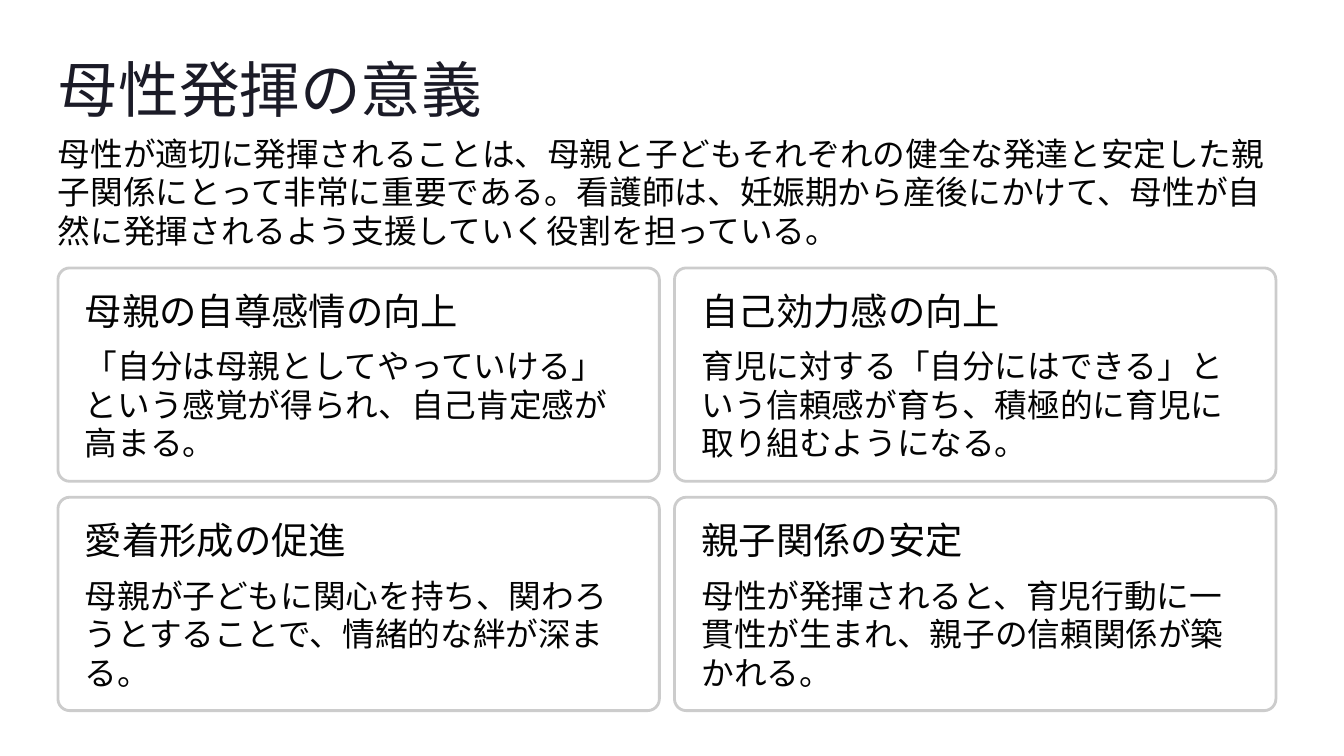
from lxml.etree import SubElement
from pptx import Presentation
from pptx.dml.color import RGBColor
from pptx.enum.shapes import MSO_SHAPE
from pptx.enum.text import MSO_ANCHOR, MSO_AUTO_SIZE, PP_ALIGN
from pptx.oxml.ns import qn
from pptx.util import Inches, Pt

COLORS = {"title": "1B1B27", "text": "030303", "card": "FFFFFF", "border": "CCCCCC"}
HEADING_FONT = "Inter"
BODY_FONT = "Karla"

TITLE = "母性発揮の意義"
INTRODUCTION = (
    "母性が適切に発揮されることは、母親と子どもそれぞれの健全な発達と安定した親子関係にとって"
    "非常に重要である。看護師は、妊娠期から産後にかけて、母性が自然に発揮されるよう支援して"
    "いく役割を担っている。"
)
CARDS = [
    ("母親の自尊感情の向上",
     "「自分は母親としてやっていける」という感覚が得られ、自己肯定感が高まる。"),
    ("自己効力感の向上",
     "育児に対する「自分にはできる」という信頼感が育ち、積極的に育児に取り組むようになる。"),
    ("愛着形成の促進",
     "母親が子どもに関心を持ち、関わろうとすることで、情緒的な絆が深まる。"),
    ("親子関係の安定",
     "母性が発揮されると、育児行動に一貫性が生まれ、親子の信頼関係が築かれる。"),
]

# Card grid, in inches
COLUMNS = 2
LEFT, TOP = 0.69, 3.19
CARD_WIDTH, CARD_HEIGHT = 7.16, 2.54
COLUMN_STEP, ROW_STEP = 7.34, 2.73
PADDING = 0.32


def color(name):
    return RGBColor.from_string(COLORS[name])


def write_text(shape, text, font_name, size, spacing, color_name="text", wrap=True):
    """Fill a shape with one left-aligned paragraph without insets."""
    frame = shape.text_frame
    frame.text = text
    frame.word_wrap = wrap
    frame.auto_size = MSO_AUTO_SIZE.NONE
    frame.vertical_anchor = MSO_ANCHOR.TOP
    frame.margin_left = frame.margin_right = frame.margin_top = frame.margin_bottom = 0
    paragraph = frame.paragraphs[0]
    paragraph.alignment = PP_ALIGN.LEFT
    paragraph.line_spacing = Pt(spacing)
    font = paragraph.runs[0].font
    font.name = font_name
    font.size = Pt(size)
    font.color.rgb = color(color_name)
    # Japanese characters take the East Asian typeface
    latin = font._element.find(qn("a:latin"))
    east_asian = latin.makeelement(qn("a:ea"), {"typeface": font_name})
    latin.addnext(east_asian)


def add_title(slide):
    title = slide.shapes.title
    title.left, title.top = Inches(LEFT), Inches(0.58)
    title.width, title.height = Inches(7.23), Inches(0.9)
    write_text(title, TITLE, HEADING_FONT, 52, 65, "title", wrap=False)


def add_text(slide, text, left, top, width, height, *style, wrap=True):
    box = slide.shapes.add_textbox(Inches(left), Inches(top), Inches(width), Inches(height))
    write_text(box, text, *style, wrap=wrap)


def add_card(slide, left, top, heading, body):
    card = slide.shapes.add_shape(
        MSO_SHAPE.ROUNDED_RECTANGLE,
        Inches(left), Inches(top), Inches(CARD_WIDTH), Inches(CARD_HEIGHT))
    card.adjustments[0] = 0.055
    card.shadow.inherit = False
    card.fill.solid()
    card.fill.fore_color.rgb = color("card")
    fill_color = card._element.spPr.find(qn("a:solidFill")).find(qn("a:srgbClr"))
    SubElement(fill_color, qn("a:alpha"), val="95000")
    card.line.color.rgb = color("border")
    card.line.width = Pt(2.4)

    text_left = left + PADDING
    add_text(slide, heading, text_left, top + PADDING, 3.68, 0.52,
             HEADING_FONT, 32, 32.5, wrap=False)
    add_text(slide, body, text_left, top + 0.94, 6.51, 1.07, BODY_FONT, 28, 33)


def main():
    presentation = Presentation()
    presentation.slide_width = Inches(16)
    presentation.slide_height = Inches(9)
    slide = presentation.slides.add_slide(presentation.slide_layouts[5])

    # Title and introduction
    add_title(slide)
    add_text(slide, INTRODUCTION, LEFT, 1.6, 14.38, 0.93, BODY_FONT, 28, 33)

    # Cards, row by row
    for index, (heading, body) in enumerate(CARDS):
        row, column = divmod(index, COLUMNS)
        add_card(slide, LEFT + column * COLUMN_STEP, TOP + row * ROW_STEP, heading, body)

    presentation.save("out.pptx")


if __name__ == "__main__":
    main()
